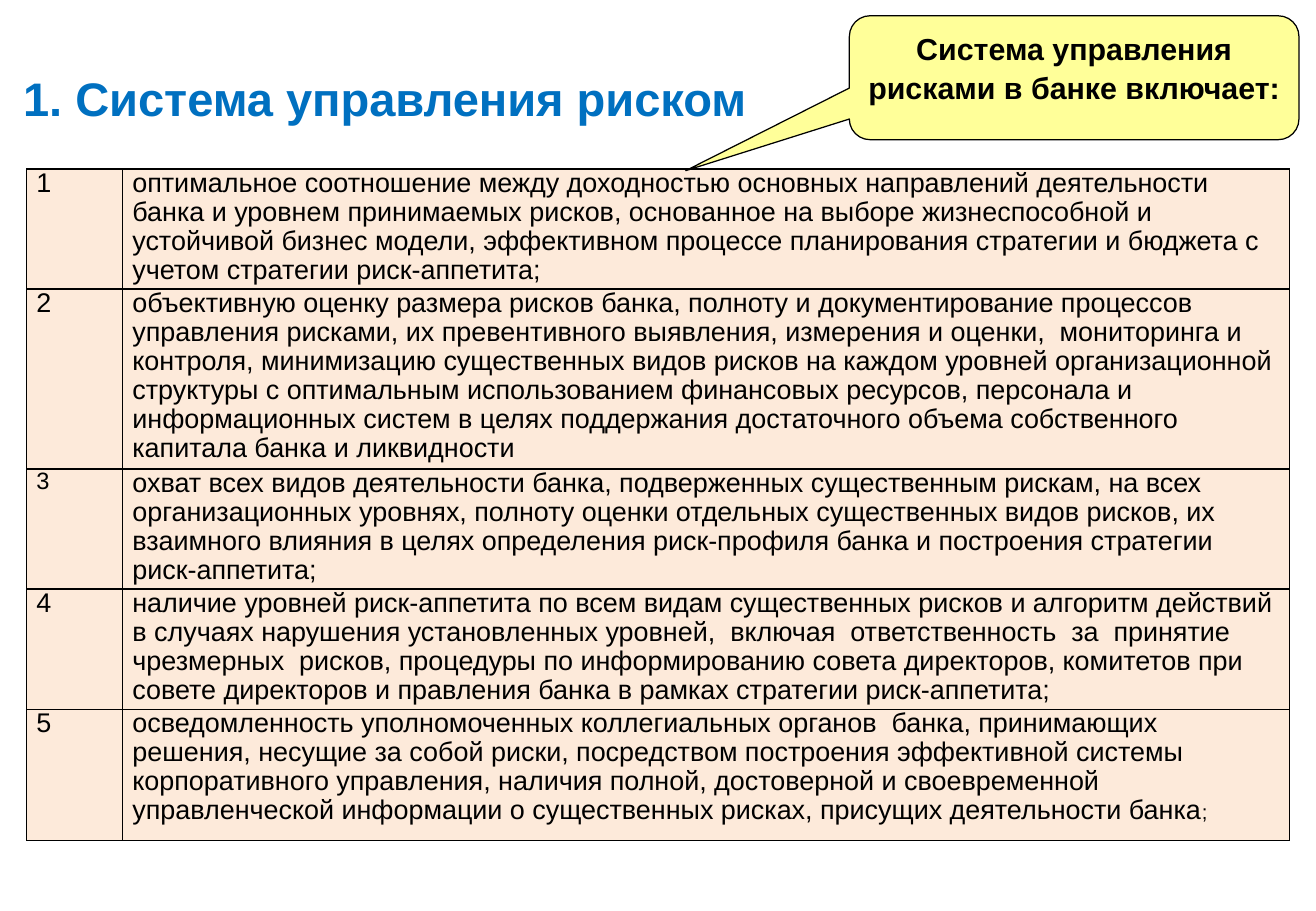
from dataclasses import dataclass

from lxml.etree import SubElement
from pptx import Presentation
from pptx.dml.color import RGBColor
from pptx.enum.shapes import MSO_SHAPE
from pptx.enum.text import MSO_ANCHOR, PP_ALIGN
from pptx.oxml.ns import qn
from pptx.slide import Slide
from pptx.table import _Cell
from pptx.util import Inches, Pt

FONT = "Arial"
BLACK = "000000"
TITLE_BLUE = "0070C0"
CELL_PEACH = "FDEADA"
CALLOUT_YELLOW = "FFFF99"
COLUMN_WIDTHS = (0.79, 9.6)


@dataclass
class Requirement:
    text: str
    height: float
    number_size: float = 16
    ending: str = ""


REQUIREMENTS = [
    Requirement(
        "оптимальное соотношение между доходностью основных направлений деятельности "
        "банка и уровнем принимаемых рисков, основанное на выборе жизнеспособной и "
        "устойчивой бизнес модели, эффективном процессе планирования стратегии и "
        "бюджета с учетом стратегии риск-аппетита;",
        0.99,
    ),
    Requirement(
        "объективную оценку размера рисков банка, полноту и документирование процессов "
        "управления рисками, их превентивного выявления, измерения и оценки,  "
        "мониторинга и контроля, минимизацию существенных видов рисков на каждом "
        "уровней организационной структуры с оптимальным использованием финансовых "
        "ресурсов, персонала и информационных систем в целях поддержания достаточного "
        "объема собственного капитала банка и ликвидности",
        1.48,
    ),
    Requirement(
        "охват всех видов деятельности банка, подверженных существенным рискам, на "
        "всех организационных уровнях, полноту оценки отдельных существенных видов "
        "рисков, их взаимного влияния в целях определения риск-профиля банка и "
        "построения стратегии риск-аппетита;",
        0.99,
        number_size=14,
    ),
    Requirement(
        "наличие уровней риск-аппетита по всем видам существенных рисков и алгоритм "
        "действий в случаях нарушения установленных уровней,  включая  ответственность  "
        "за  принятие  чрезмерных  рисков, процедуры по информированию совета "
        "директоров, комитетов при совете директоров и правления банка в рамках "
        "стратегии риск-аппетита;",
        0.99,
    ),
    Requirement(
        "осведомленность уполномоченных коллегиальных органов  банка, принимающих "
        "решения, несущие за собой риски, посредством построения эффективной системы "
        "корпоративного управления, наличия полной, достоверной и своевременной "
        "управленческой информации о существенных рисках, присущих деятельности банка",
        1.08,
        ending=";",
    ),
]


def rgb(color: str) -> RGBColor:
    return RGBColor.from_string(color)


def set_font(font, size: float, color: str = BLACK, bold: bool = False) -> None:
    font.name = FONT
    font.size = Pt(size)
    font.bold = bold
    font.color.rgb = rgb(color)


def add_borders(cell: _Cell) -> None:
    properties = cell._tc.get_or_add_tcPr()
    for index, side in enumerate(("a:lnL", "a:lnR", "a:lnT", "a:lnB")):
        border = properties.makeelement(qn(side), {"w": str(Pt(1))})
        fill = SubElement(border, qn("a:solidFill"))
        SubElement(fill, qn("a:srgbClr"), val=BLACK)
        properties.insert(index, border)


def fill_cell(cell: _Cell, text: str, size: float = 16) -> None:
    cell.margin_left = cell.margin_right = Inches(0.08)
    cell.margin_top = cell.margin_bottom = 0
    cell.fill.solid()
    cell.fill.fore_color.rgb = rgb(CELL_PEACH)
    add_borders(cell)
    paragraph = cell.text_frame.paragraphs[0]
    paragraph.text = text
    paragraph.line_spacing = 0.97
    set_font(paragraph.font, size)


def add_title(slide: Slide) -> None:
    title = slide.shapes.title
    title.left, title.top = Inches(0.14), Inches(0.21)
    title.width, title.height = Inches(10.55), Inches(0.79)
    frame = title.text_frame
    frame.margin_left = frame.margin_right = Inches(0.05)
    frame.margin_top, frame.margin_bottom = Inches(0.4), 0
    frame.vertical_anchor = MSO_ANCHOR.MIDDLE
    heading = frame.paragraphs[0]
    heading.text = "1. Система управления риском"
    heading.alignment = PP_ALIGN.LEFT
    set_font(heading.font, 27.9, TITLE_BLUE, bold=True)


def add_requirements(slide: Slide) -> None:
    total_height = sum(requirement.height for requirement in REQUIREMENTS)
    table = slide.shapes.add_table(
        len(REQUIREMENTS), len(COLUMN_WIDTHS), Inches(0.22), Inches(1.39),
        Inches(sum(COLUMN_WIDTHS)), Inches(total_height),
    ).table
    table.first_row = table.horz_banding = False
    for column, width in zip(table.columns, COLUMN_WIDTHS):
        column.width = Inches(width)
    for number, (row, requirement) in enumerate(zip(table.rows, REQUIREMENTS), start=1):
        row.height = Inches(requirement.height)
        number_cell, text_cell = row.cells
        fill_cell(number_cell, str(number), requirement.number_size)
        fill_cell(text_cell, requirement.text)
        if requirement.ending:
            ending = text_cell.text_frame.paragraphs[0].add_run()
            ending.text = requirement.ending
            ending.font.size = Pt(12)


def add_callout(slide: Slide) -> None:
    callout = slide.shapes.add_shape(
        MSO_SHAPE.ROUNDED_RECTANGULAR_CALLOUT,
        Inches(6.99), Inches(0.13), Inches(3.7), Inches(1.02),
    )
    for index, value in enumerate((-0.864, 0.75, 0.167)):
        callout.adjustments[index] = value
    callout.shadow.inherit = False
    callout.fill.solid()
    callout.fill.fore_color.rgb = rgb(CALLOUT_YELLOW)
    callout.line.color.rgb = rgb(BLACK)
    callout.line.width = Pt(0.75)
    frame = callout.text_frame
    frame.word_wrap = True
    frame.vertical_anchor = MSO_ANCHOR.TOP
    lead_in = frame.paragraphs[0]
    lead_in.text = "Система управления рисками в банке включает:"
    lead_in.alignment = PP_ALIGN.CENTER
    lead_in.line_spacing = 1.07
    set_font(lead_in.font, 18, bold=True)


def main() -> None:
    presentation = Presentation()
    presentation.slide_width = Inches(10.83)
    presentation.slide_height = Inches(7.5)
    slide = presentation.slides.add_slide(presentation.slide_layouts[5])
    add_title(slide)
    add_requirements(slide)
    add_callout(slide)
    presentation.save("out.pptx")


if __name__ == "__main__":
    main()
